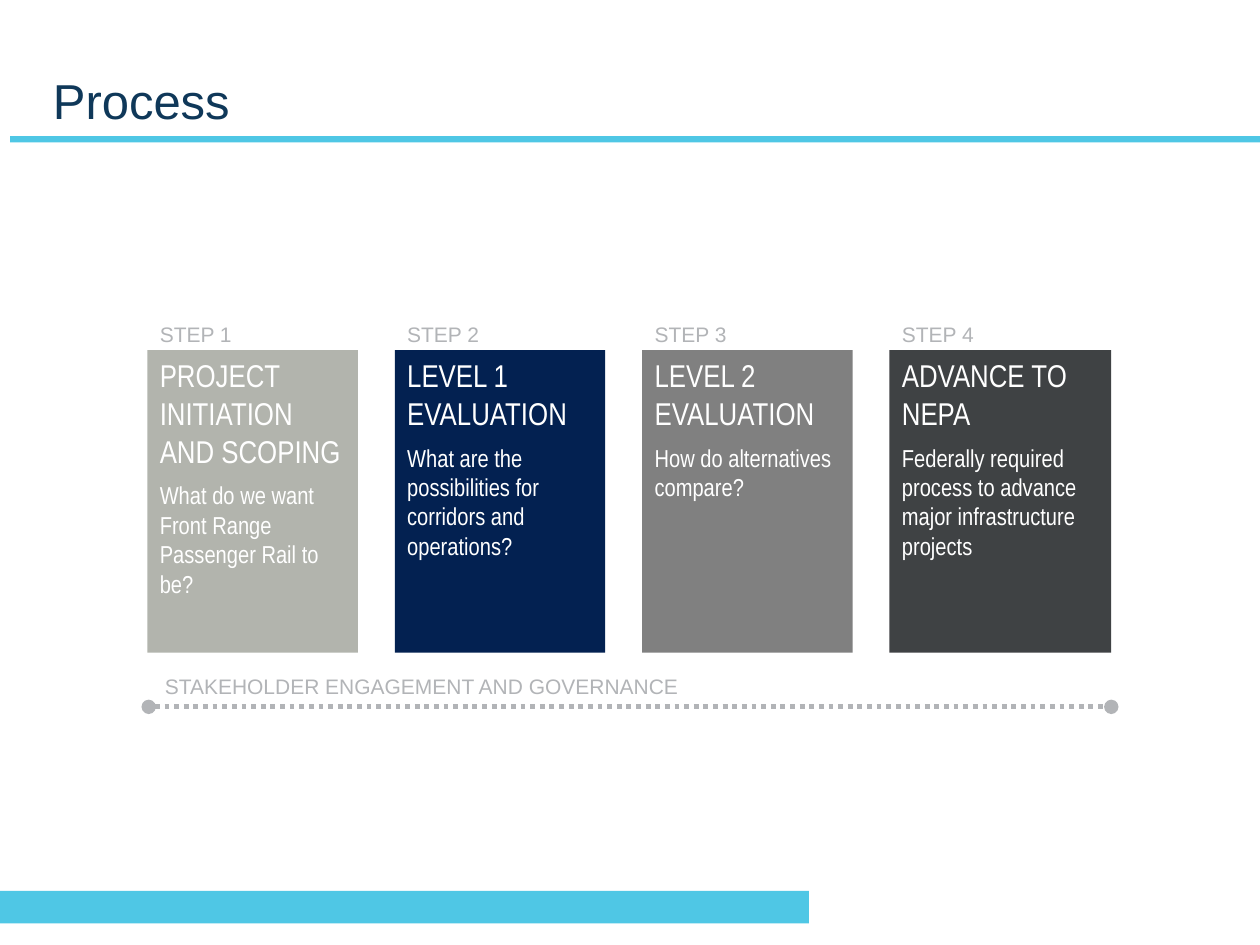
from dataclasses import dataclass

from lxml import etree
from pptx import Presentation
from pptx.dml.color import RGBColor
from pptx.enum.dml import MSO_LINE
from pptx.enum.shapes import MSO_CONNECTOR, MSO_SHAPE
from pptx.enum.text import MSO_ANCHOR, MSO_AUTO_SIZE, PP_ALIGN
from pptx.oxml.ns import qn
from pptx.util import Inches, Pt


@dataclass(frozen=True)
class Theme:
    accent: str = "4FC7E5"
    title: str = "0F3859"
    label: str = "B2B4B7"
    white: str = "FFFFFF"
    font: str = "Arial"
    narrow_font: str = "Arial Narrow"
    title_size: int = 28
    heading_size: int = 18
    body_size: int = 14
    label_size: int = 12


class SlideBuilder:
    """Holds the theme and the slide being built."""

    def __init__(self, slide, theme):
        self.slide = slide
        self.theme = theme
        self.shapes = slide.shapes

    def start_group(self):
        self.shapes = self.slide.shapes.add_group_shape().shapes

    def add_text(self, paragraph, text, size, color, font):
        paragraph.alignment = PP_ALIGN.LEFT
        run = paragraph.add_run()
        run.text = text
        for name, value in {"name": font, "size": Pt(size)}.items():
            setattr(run.font, name, value)
        run.font.color.rgb = RGBColor.from_string(color)

    def title(self, text, left, top, width, height):
        shape = self.slide.shapes.title
        place = {"left": left, "top": top, "width": width, "height": height}
        for name, value in place.items():
            setattr(shape, name, Inches(value))
        frame_format = {
            "vertical_anchor": MSO_ANCHOR.BOTTOM,
            "auto_size": MSO_AUTO_SIZE.NONE,
            "word_wrap": True,
            "margin_left": Inches(0.25),
            "margin_right": Inches(0.25),
        }
        for name, value in frame_format.items():
            setattr(shape.text_frame, name, value)
        theme = self.theme
        self.add_text(shape.text_frame.paragraphs[0], text,
                      theme.title_size, theme.title, theme.font)

    def rectangle(self, left, top, width, height, color):
        shape = self.shapes.add_shape(
            MSO_SHAPE.RECTANGLE,
            Inches(left), Inches(top), Inches(width), Inches(height))
        shape.shadow.inherit = False
        shape.fill.solid()
        shape.fill.fore_color.rgb = RGBColor.from_string(color)
        shape.line.fill.background()
        return shape

    def card(self, left, top, width, height, color, heading, question):
        theme = self.theme
        frame = self.rectangle(left, top, width, height, color).text_frame
        frame.word_wrap = True
        frame.vertical_anchor = MSO_ANCHOR.TOP
        self.add_text(frame.paragraphs[0], heading,
                      theme.heading_size, theme.white, theme.narrow_font)
        paragraph = frame.add_paragraph()
        paragraph.space_before = Pt(6)
        self.add_text(paragraph, question,
                      theme.body_size, theme.white, theme.narrow_font)

    def label(self, text, left, top, width, height=0.3):
        theme = self.theme
        frame = self.shapes.add_textbox(
            Inches(left), Inches(top), Inches(width), Inches(height)).text_frame
        frame.word_wrap = True
        frame.auto_size = MSO_AUTO_SIZE.SHAPE_TO_FIT_TEXT
        self.add_text(frame.paragraphs[0], text,
                      theme.label_size, theme.label, theme.font)

    def dotted_line(self, start, end, y):
        connector = self.shapes.add_connector(
            MSO_CONNECTOR.STRAIGHT,
            Inches(start), Inches(y), Inches(end), Inches(y))
        line = connector.line
        line.color.rgb = RGBColor.from_string(self.theme.label)
        line.width = Pt(2.75)
        line.dash_style = MSO_LINE.ROUND_DOT  # stored as sysDot
        properties = connector.element.spPr
        outline = properties.find(qn("a:ln"))
        for tag in ("a:headEnd", "a:tailEnd"):
            etree.SubElement(outline, qn(tag), type="oval")
        etree.SubElement(properties, qn("a:effectLst"))


STEPS = [
    ("B2B4AD", "PROJECT INITIATION AND SCOPING",
     "What do we want Front Range Passenger Rail to be?"),
    ("032151", "LEVEL 1 EVALUATION",
     "What are the possibilities for corridors and operations?"),
    ("808080", "LEVEL 2 EVALUATION", "How do alternatives compare?"),
    ("3F4244", "ADVANCE TO NEPA",
     "Federally required process to advance major infrastructure projects"),
]
FIRST_LEFT, LAST_LEFT = 1.17, 7.06
CARD_TOP, CARD_HEIGHT = 2.78, 2.4
CARD_WIDTH, LAST_CARD_WIDTH = 1.67, 1.76


def main():
    presentation = Presentation()
    presentation.slide_width = Inches(10)
    presentation.slide_height = Inches(7.5)
    slide = presentation.slides.add_slide(presentation.slide_layouts[5])
    theme = Theme()
    builder = SlideBuilder(slide, theme)

    # Title and accent bars
    builder.title("Process", 0.17, 0, 9.67, 1.08)
    builder.rectangle(0, 7.07, 6.42, 0.26, theme.accent)
    builder.rectangle(0.08, 1.08, 9.92, 0.05, theme.accent)

    # Evenly spaced step cards; the last one is slightly wider
    builder.start_group()
    last = len(STEPS) - 1
    pitch = (LAST_LEFT - FIRST_LEFT) / last
    lefts = [FIRST_LEFT + index * pitch for index in range(len(STEPS))]
    for index, (left, step) in enumerate(zip(lefts, STEPS)):
        width = LAST_CARD_WIDTH if index == last else CARD_WIDTH
        builder.card(left, CARD_TOP, width, CARD_HEIGHT, *step)

    # Engagement line below the cards
    builder.dotted_line(1.18, 8.82, 5.61)
    builder.label("STAKEHOLDER ENGAGEMENT AND GOVERNANCE", 1.21, 5.3, 4.71)

    # Step labels above the cards
    for number, left in enumerate(lefts, start=1):
        builder.label(f"STEP {number}", left, 2.5, 1.14)

    presentation.save("out.pptx")


if __name__ == "__main__":
    main()
